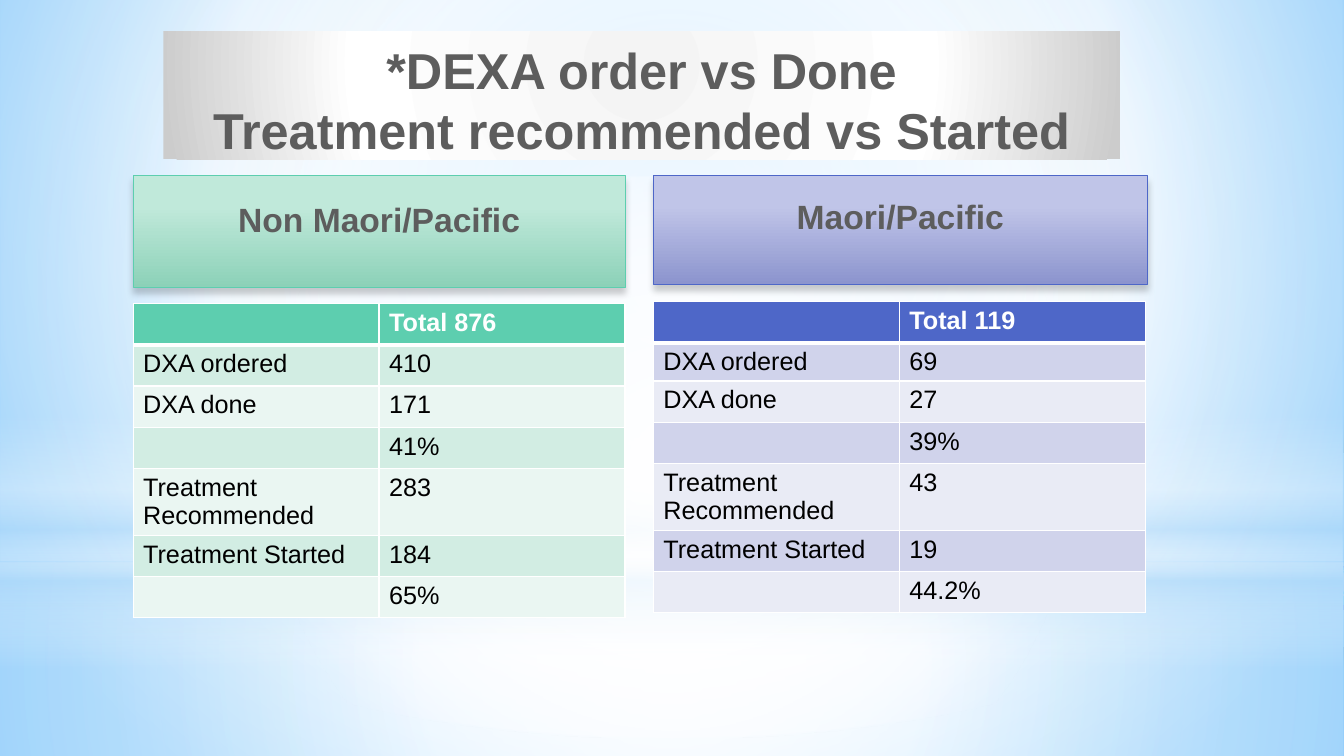
"""Build a slide comparing DEXA scans and treatment for two patient groups."""
from dataclasses import dataclass

from lxml import etree
from pptx import Presentation
from pptx.dml.color import RGBColor
from pptx.enum.shapes import MSO_SHAPE
from pptx.enum.text import MSO_ANCHOR, PP_ALIGN
from pptx.oxml.ns import qn
from pptx.util import Inches, Pt

RECTANGLE, ELLIPSE = MSO_SHAPE.RECTANGLE, MSO_SHAPE.OVAL
MIDDLE, BOTTOM = MSO_ANCHOR.MIDDLE, MSO_ANCHOR.BOTTOM
CENTER = PP_ALIGN.CENTER

FONT = "Arial"
WHITE = RGBColor(0xFF, 0xFF, 0xFF)
BLACK = RGBColor(0x00, 0x00, 0x00)
TITLE_GRAY = RGBColor(0x5D, 0x5D, 0x5D)
PALE_GRAY = RGBColor(0xF4, 0xF4, 0xF4)
SILVER = RGBColor(0xCC, 0xCC, 0xCC)
LIGHT_SKY = RGBColor(0x9E, 0xD5, 0xFF)
SKY = RGBColor(0x5B, 0xB9, 0xFF)
MIST = RGBColor(0xB4, 0xDC, 0xFA)
GREEN = RGBColor(0x5D, 0xCE, 0xAF)
GREEN_TOP = RGBColor(0xC0, 0xE9, 0xDA)
GREEN_BASE = RGBColor(0x8C, 0xD1, 0xB8)
GREEN_BAND = RGBColor(0xD2, 0xED, 0xE3)
GREEN_PALE = RGBColor(0xEA, 0xF6, 0xF2)
BLUE = RGBColor(0x4E, 0x67, 0xC8)
BLUE_TOP = RGBColor(0xC0, 0xC5, 0xE8)
BLUE_BASE = RGBColor(0x8C, 0x94, 0xCE)
BLUE_BAND = RGBColor(0xD0, 0xD3, 0xEB)
BLUE_PALE = RGBColor(0xE9, 0xEB, 0xF5)


@dataclass
class Stop:
    position: int
    color: RGBColor
    opacity: int = 100


@dataclass
class Gradient:
    stops: list[Stop]
    focus: tuple[int, int, int, int] | None = None


@dataclass
class Glow:
    geometry: MSO_SHAPE
    top: float
    height: float
    gradient: Gradient


@dataclass
class Group:
    name: str
    left: float
    heading_width: float
    heading_height: float
    table_top: float
    first_row_height: float
    accent: RGBColor
    heading_colors: tuple[RGBColor, RGBColor]
    bands: tuple[RGBColor, RGBColor]
    values: list[str]


CENTRAL = (50, 50, 50, 50)
UPPER = (20, 10, 20, 60)
BACKGROUND = Gradient([Stop(0, LIGHT_SKY), Stop(60, WHITE), Stop(100, SKY)], UPPER)
TITLE_FILL = Gradient([Stop(0, PALE_GRAY), Stop(60, WHITE), Stop(100, SILVER)], UPPER)
GLOWS = [
    Glow(RECTANGLE, 5.58, 1.92, Gradient(
        [Stop(0, WHITE, 91), Stop(37, WHITE, 76), Stop(100, MIST, 79)], CENTRAL)),
    Glow(RECTANGLE, 0, 5.58, Gradient(
        [Stop(0, WHITE, 89), Stop(48, WHITE, 62), Stop(100, MIST, 79)], CENTRAL)),
    Glow(RECTANGLE, 4.12, 2.5, Gradient(
        [Stop(0, WHITE, 0), Stop(29, WHITE, 30), Stop(45, MIST, 40),
         Stop(55, WHITE, 26), Stop(65, MIST, 60), Stop(100, WHITE, 0)])),
    Glow(ELLIPSE, 1.75, 5.58, Gradient([Stop(0, WHITE), Stop(56, WHITE, 0)], CENTRAL)),
]
TITLE_LINES = ["*DEXA order vs Done", "Treatment recommended vs Started"]
LABELS = ["", "DXA ordered", "DXA done", "", "Treatment Recommended", "Treatment Started", ""]
ROW_HEIGHT, TALL_ROW_HEIGHT, COLUMN_WIDTH = 0.41, 0.66, 2.44
GROUPS = [
    Group("Non Maori/Pacific", 1.32, 4.88, 1.11, 3.01, 0.41, GREEN,
          (GREEN_TOP, GREEN_BASE), (GREEN_BAND, GREEN_PALE),
          ["Total 876", "410", "171", "41%", "283", "184", "65%"]),
    Group("Maori/Pacific", 6.48, 4.9, 1.08, 2.99, 0.38, BLUE,
          (BLUE_TOP, BLUE_BASE), (BLUE_BAND, BLUE_PALE),
          ["Total 119", "69", "27", "39%", "43", "19", "44.2%"]),
]


def apply_gradient(properties, gradient: Gradient) -> None:
    """Replace the solid fill of a properties element with a gradient."""
    fill = etree.Element(qn("a:gradFill"), rotWithShape="1")
    stop_list = etree.SubElement(fill, qn("a:gsLst"))
    for stop in gradient.stops:
        entry = etree.SubElement(stop_list, qn("a:gs"), pos=str(stop.position * 1000))
        color = etree.SubElement(entry, qn("a:srgbClr"), val=str(stop.color))
        if stop.opacity < 100:
            etree.SubElement(color, qn("a:alpha"), val=str(stop.opacity * 1000))
    if gradient.focus:
        radial = etree.SubElement(fill, qn("a:path"), path="circle")
        sides = {side: str(value * 1000) for side, value in zip("ltrb", gradient.focus)}
        etree.SubElement(radial, qn("a:fillToRect"), **sides)
    else:
        etree.SubElement(fill, qn("a:lin"), ang="5400000", scaled="0")
    properties.replace(properties.find(qn("a:solidFill")), fill)


def add_gradient_shape(slide, geometry: MSO_SHAPE, left: float, top: float,
                       width: float, height: float, gradient: Gradient):
    """Add a borderless shape filled with a gradient."""
    shape = slide.shapes.add_shape(
        geometry, Inches(left), Inches(top), Inches(width), Inches(height))
    shape.shadow.inherit = False
    shape.line.fill.background()
    shape.fill.solid()
    apply_gradient(shape.element.spPr, gradient)
    return shape


def add_run(paragraph, text: str, size: int, color: RGBColor, bold: bool) -> None:
    """Append one formatted run."""
    run = paragraph.add_run()
    run.text = text
    run.font.name = FONT
    run.font.size = Pt(size)
    run.font.bold = bold
    run.font.color.rgb = color


def add_shadow(shape) -> None:
    """Give a shape a soft shadow below it."""
    effects = shape.element.spPr.find(qn("a:effectLst"))
    shadow = etree.SubElement(effects, qn("a:outerShdw"), blurRad=str(Pt(5)),
                              dist=str(Pt(4)), dir="5400000", rotWithShape="0")
    color = etree.SubElement(shadow, qn("a:srgbClr"), val=str(BLACK))
    etree.SubElement(color, qn("a:alpha"), val="20000")


def add_heading(slide, group: Group) -> None:
    """Draw the coloured heading above a group's table."""
    top_color, base_color = group.heading_colors
    heading = add_gradient_shape(
        slide, RECTANGLE, group.left, 1.74, group.heading_width, group.heading_height,
        Gradient([Stop(28, top_color), Stop(100, base_color)]))
    heading.line.color.rgb = group.accent
    heading.line.width = Pt(0.75)
    add_shadow(heading)
    frame = heading.text_frame
    frame.word_wrap = True
    frame.vertical_anchor = BOTTOM
    frame.margin_bottom = Inches(0.48)
    frame.paragraphs[0].alignment = CENTER
    add_run(frame.paragraphs[0], group.name, 24, TITLE_GRAY, True)


def set_borders(cell, top: int, bottom: int) -> None:
    """Draw white cell borders with the given top and bottom widths."""
    properties = cell._tc.get_or_add_tcPr()
    widths = {"a:lnL": 1, "a:lnR": 1, "a:lnT": top, "a:lnB": bottom}
    for index, (tag, width) in enumerate(widths.items()):
        border = etree.Element(qn(tag), w=str(Pt(width)))
        fill = etree.SubElement(border, qn("a:solidFill"))
        etree.SubElement(fill, qn("a:srgbClr"), val=str(WHITE))
        properties.insert(index, border)


def add_group_table(slide, group: Group) -> None:
    """Draw a group's table of counts."""
    heights = [ROW_HEIGHT, group.first_row_height] + [ROW_HEIGHT] * 5
    heights[LABELS.index("Treatment Recommended")] = TALL_ROW_HEIGHT
    table = slide.shapes.add_table(
        len(LABELS), 2, Inches(group.left), Inches(group.table_top),
        Inches(2 * COLUMN_WIDTH), Inches(sum(heights))).table
    for column in table.columns:
        column.width = Inches(COLUMN_WIDTH)
    for row_index, texts in enumerate(zip(LABELS, group.values)):
        table.rows[row_index].height = Inches(heights[row_index])
        is_header = row_index == 0
        for column_index, text in enumerate(texts):
            cell = table.cell(row_index, column_index)
            cell.fill.solid()
            cell.fill.fore_color.rgb = (
                group.accent if is_header else group.bands[(row_index - 1) % 2])
            set_borders(cell, 3 if row_index == 1 else 1, 3 if is_header else 1)
            if text:
                add_run(cell.text_frame.paragraphs[0], text, 18,
                        WHITE if is_header else BLACK, is_header)


def format_title(title) -> None:
    """Place, fill and write the title in front of the backdrop."""
    title.left, title.top = Inches(1.62), Inches(0.31)
    title.width, title.height = Inches(9.49), Inches(1.27)
    title.fill.solid()
    apply_gradient(title.element.spPr, TITLE_FILL)
    frame = title.text_frame
    frame.word_wrap = True
    frame.vertical_anchor = MIDDLE
    frame.margin_top, frame.margin_bottom = Inches(0.08), 0
    paragraph = frame.paragraphs[0]
    paragraph.alignment = CENTER
    for index, line in enumerate(TITLE_LINES):
        if index:
            paragraph.add_line_break()
        add_run(paragraph, line, 36, TITLE_GRAY, True)
    title.element.getparent().append(title.element)


def main() -> None:
    """Build and save the presentation."""
    presentation = Presentation()
    presentation.slide_width, presentation.slide_height = Inches(13.33), Inches(7.5)
    slide = presentation.slides.add_slide(presentation.slide_layouts.get_by_name("Title Only"))
    slide.background.fill.solid()
    apply_gradient(slide.element.find(".//" + qn("p:bgPr")), BACKGROUND)
    for glow in GLOWS:
        add_gradient_shape(slide, glow.geometry, 0, glow.top, 13.33, glow.height, glow.gradient)
    for group in GROUPS:
        add_heading(slide, group)
        add_group_table(slide, group)
    format_title(slide.shapes.title)
    presentation.save("out.pptx")


if __name__ == "__main__":
    main()
